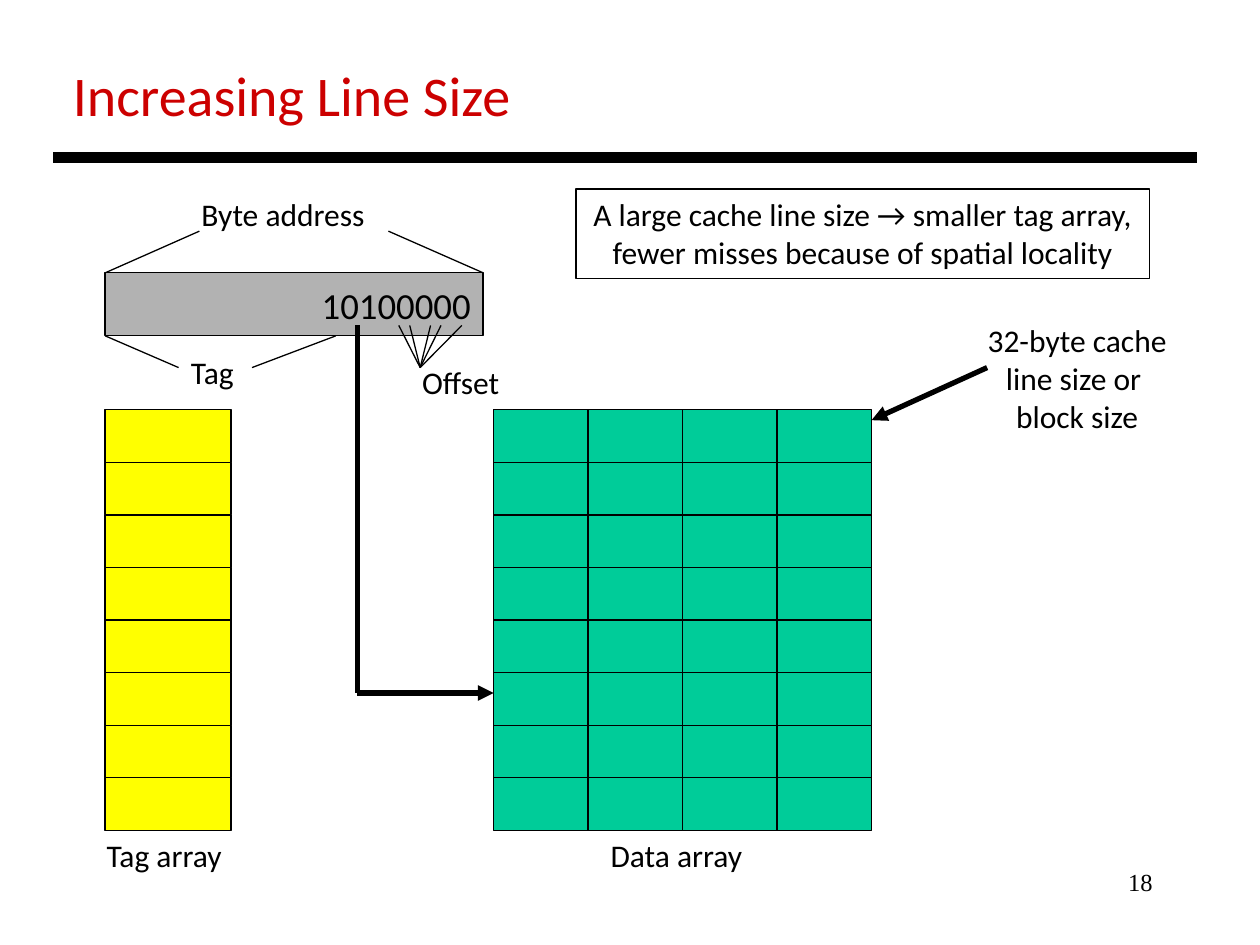
from lxml.etree import SubElement
from pptx import Presentation
from pptx.dml.color import RGBColor
from pptx.enum.shapes import MSO_CONNECTOR, MSO_SHAPE
from pptx.enum.text import MSO_ANCHOR, PP_ALIGN
from pptx.oxml.ns import qn
from pptx.util import Cm, Pt

LEFT, CENTER, RIGHT = PP_ALIGN.LEFT, PP_ALIGN.CENTER, PP_ALIGN.RIGHT
color = RGBColor.from_string

prs = Presentation()
prs.slide_width, prs.slide_height = Cm(25.4), Cm(19.05)
slide = prs.slides.add_slide(prs.slide_layouts[6])
shapes = slide.shapes


def write(shape, text, size=18, align=LEFT, font="Calibri", ink="000000"):
    frame = shape.text_frame
    frame.word_wrap = False
    frame.text = text
    for paragraph in frame.paragraphs:
        paragraph.alignment = align
        for run in paragraph.runs:
            run.font.size, run.font.name = Pt(size), font
            run.font.color.rgb = color(ink)


def draw_line(x1, y1, x2, y2, width=0.75, arrow=False):
    line = shapes.add_connector(MSO_CONNECTOR.STRAIGHT, Cm(x1), Cm(y1), Cm(x2), Cm(y2))
    line.line.color.rgb = color("000000")
    line.line.width = Pt(width)
    if arrow:
        SubElement(line.line._get_or_add_ln(), qn("a:tailEnd"), type="triangle")
    SubElement(line._element.spPr, qn("a:effectLst"))


# Title, rule and page number
title = shapes.add_textbox(Cm(1.22), Cm(1.09), Cm(9.42), Cm(1.63))
write(title, "Increasing Line Size", 32, ink="CC0000")
draw_line(1.07, 3.17, 24.13, 3.17, 6)
page_number = shapes.add_textbox(Cm(18.21), Cm(17.35), Cm(5.28), Cm(1.27))
write(page_number, "18", 14, RIGHT, "Times New Roman")

# Byte address, and the cells of the tag and data arrays
tag_left, data_left, array_top = 2.12, 9.95, 8.26
rows, row_height = 8, 1.06
boxes = [(tag_left, 5.5, 7.62, 1.27, "B2B2B2")]
for left, columns, width, fill in [(tag_left, 1, 2.54, "FFFF00"), (data_left, 4, 1.905, "00CC99")]:
    for column in range(columns):
        for row in range(rows):
            boxes.append((left + column * width, array_top + row * row_height,
                          width, row_height, fill))

cells = []
for left, top, width, height, fill in boxes:
    cell = shapes.add_shape(MSO_SHAPE.RECTANGLE, Cm(left), Cm(top), Cm(width), Cm(height))
    cell.shadow.inherit = False
    cell.fill.solid()
    cell.fill.fore_color.rgb = color(fill)
    cell.line.color.rgb = color("000000")
    cell.line.width = Pt(0.75)
    cells.append(cell)

byte_address = cells[0]
write(byte_address, "10100000", 21, RIGHT)
byte_address.text_frame.vertical_anchor = MSO_ANCHOR.MIDDLE

# Labels
for text, left, top, width, height, align in [
    ("Byte address", 3.81, 3.81, 3.84, 1.02, LEFT),
    ("Tag", 3.6, 6.99, 1.4, 1.02, LEFT),
    ("Offset", 8.26, 7.2, 2.08, 1.02, LEFT),
    ("Tag array", 1.9, 16.72, 2.84, 1.02, LEFT),
    ("Data array", 12.06, 16.72, 3.2, 1.02, LEFT),
    ("32-byte cache\nline size or \nblock size", 19.63, 6.35, 4.17, 2.57, CENTER),
]:
    label = shapes.add_textbox(Cm(left), Cm(top), Cm(width), Cm(height))
    write(label, text, align=align)

takeaway = shapes.add_textbox(Cm(11.61), Cm(3.81), Cm(11.56), Cm(1.8))
write(takeaway, "A large cache line size → smaller tag array,\n"
      "fewer misses because of spatial locality", align=CENTER)
takeaway.line.color.rgb = color("000000")
takeaway.line.width = Pt(0.75)

# Brackets around the whole address and around its tag part
draw_line(4.02, 4.66, 2.12, 5.5)
draw_line(7.83, 4.66, 9.74, 5.5)
draw_line(2.12, 6.77, 3.6, 7.41)
draw_line(5.08, 7.41, 6.77, 6.77)

# Offset bits meet at one point
for bit_x in (8.04, 8.26, 8.68, 8.89, 9.31):
    draw_line(bit_x, 6.56, 8.47, 7.41)

# Index bits select a row; the cache line is pointed out
draw_line(7.2, 6.56, 7.2, 13.97, 3)
draw_line(7.2, 13.97, data_left, 13.97, 3, arrow=True)
draw_line(19.9, 7.41, 17.57, 8.47, 3, arrow=True)

prs.save("out.pptx")
